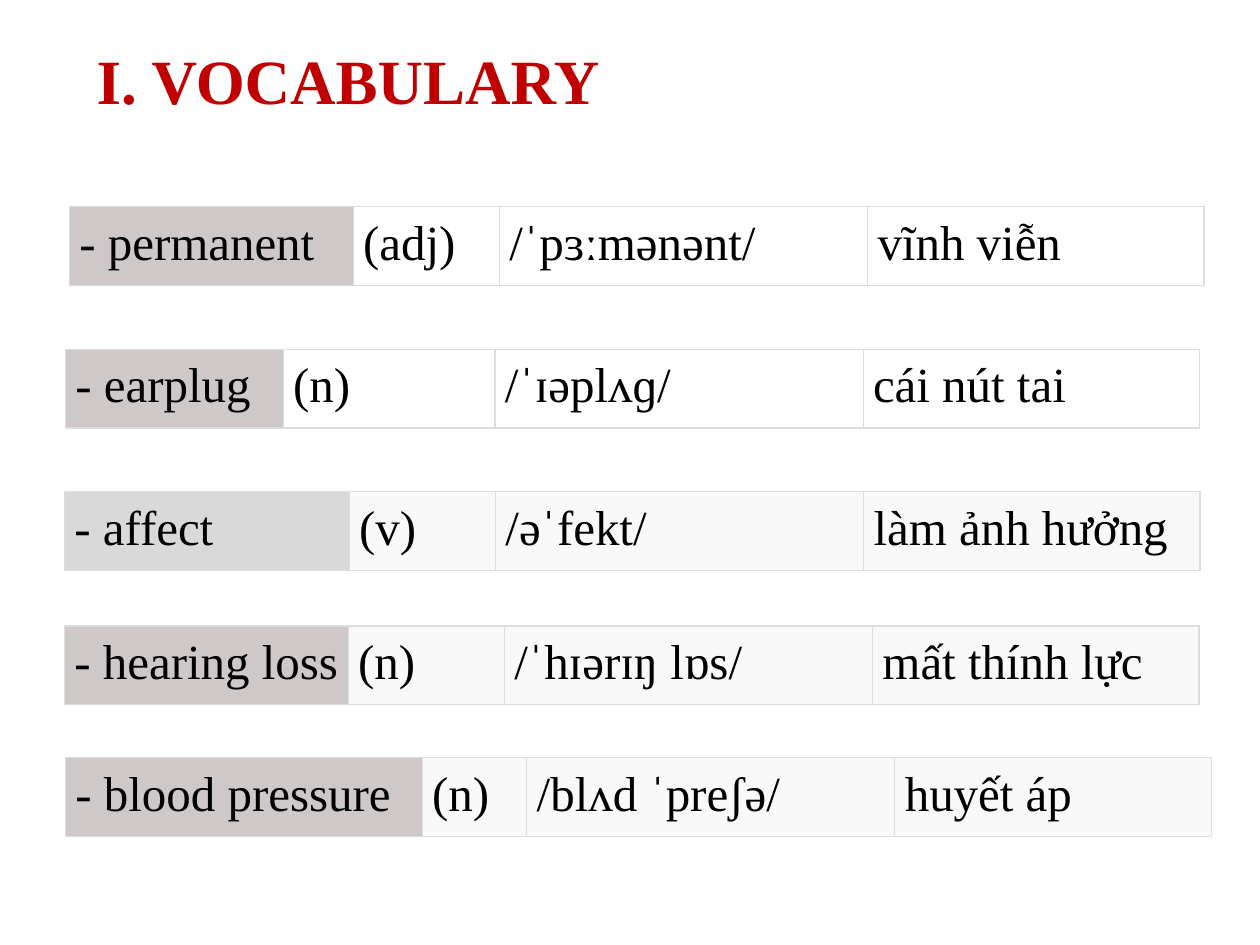
"""Build the vocabulary slide with one single-row table per word."""
import dataclasses

import lxml.etree
import pptx
import pptx.dml.color
import pptx.enum.text
import pptx.oxml.ns
import pptx.slide
import pptx.table
import pptx.text.text
import pptx.util

Cm = pptx.util.Cm
Pt = pptx.util.Pt
FONT = "Times New Roman"
SOUND = 7.42
PAD = Cm(0.2)


@dataclasses.dataclass
class Entry:
    left: float
    top: float
    widths: tuple[float, float, float]
    words: tuple[str, str, str, str]
    key: str = "CEC8C8"
    fill: str = "F9F9F9"


ENTRIES = [
    Entry(1.4, 4.17, (5.72, 2.95, 6.78),
          ("- permanent", "(adj)", "/ˈpɜːmənənt/", "vĩnh viễn"), fill="FFFFFF"),
    Entry(1.32, 7.04, (4.39, 4.27, 6.78),
          ("- earplug", "(n)", "/ˈɪəplʌɡ/", "cái nút tai"), fill="FFFFFF"),
    Entry(1.3, 9.91, (5.74, 2.95, 6.78),
          ("- affect", "(v)", "/əˈfekt/", "làm ảnh hưởng"), key="D9D9D9"),
    Entry(1.3, 12.62, (5.72, 3.15, 6.58),
          ("- hearing loss", "(n)", "/ˈhɪərɪŋ lɒs/", "mất thính lực")),
    Entry(1.32, 15.27, (7.19, 2.11, 6.38),
          ("- blood pressure", "(n)", "/blʌd ˈpreʃə/", "huyết áp")),
]


def color(code: str) -> pptx.dml.color.RGBColor:
    return pptx.dml.color.RGBColor.from_string(code)


def write(frame: pptx.text.text.TextFrame, text: str, size: int,
          code: str, bold: bool = False) -> None:
    para = frame.paragraphs[0]
    para.alignment = pptx.enum.text.PP_ALIGN.LEFT
    run = para.add_run()
    run.text = text
    run.font.name = FONT
    run.font.size = Pt(size)
    run.font.bold = bold
    run.font.color.rgb = color(code)


def border(cell: pptx.table._Cell, code: str) -> None:
    qn = pptx.oxml.ns.qn
    props = cell._tc.get_or_add_tcPr()
    for side in ("lnL", "lnR", "lnT", "lnB"):
        line = lxml.etree.SubElement(props, qn(f"a:{side}"), w=str(Pt(0.75)))
        solid = lxml.etree.SubElement(line, qn("a:solidFill"))
        lxml.etree.SubElement(solid, qn("a:srgbClr"), val=code)


def draw(slide: pptx.slide.Slide, entry: Entry) -> None:
    word, kind, sense = entry.widths
    widths = (word, kind, SOUND, sense)
    table = slide.shapes.add_table(
        1, len(widths), Cm(entry.left), Cm(entry.top),
        Cm(sum(widths)), Cm(1.09)).table
    table.first_row = False
    table.horz_banding = False
    for col, (width, text) in enumerate(zip(widths, entry.words)):
        table.columns[col].width = Cm(width)
        cell = table.cell(0, col)
        cell.margin_left = cell.margin_right = PAD
        cell.margin_top = cell.margin_bottom = PAD
        border(cell, "DDDDDD")
        cell.fill.solid()
        cell.fill.fore_color.rgb = color(entry.fill if col else entry.key)
        write(cell.text_frame, text, 28, "000000")


def main() -> None:
    deck = pptx.Presentation()
    deck.slide_width, deck.slide_height = Cm(25.4), Cm(19.05)
    slide = deck.slides.add_slide(deck.slide_layouts[6])
    title = slide.shapes.add_textbox(Cm(1.7), Cm(0), Cm(21.6), Cm(3.18))
    frame = title.text_frame
    frame.word_wrap = True
    frame.vertical_anchor = pptx.enum.text.MSO_ANCHOR.MIDDLE
    write(frame, "I. VOCABULARY", 36, "C00000", True)
    for entry in ENTRIES:
        draw(slide, entry)
    deck.save("out.pptx")


if __name__ == "__main__":
    main()
